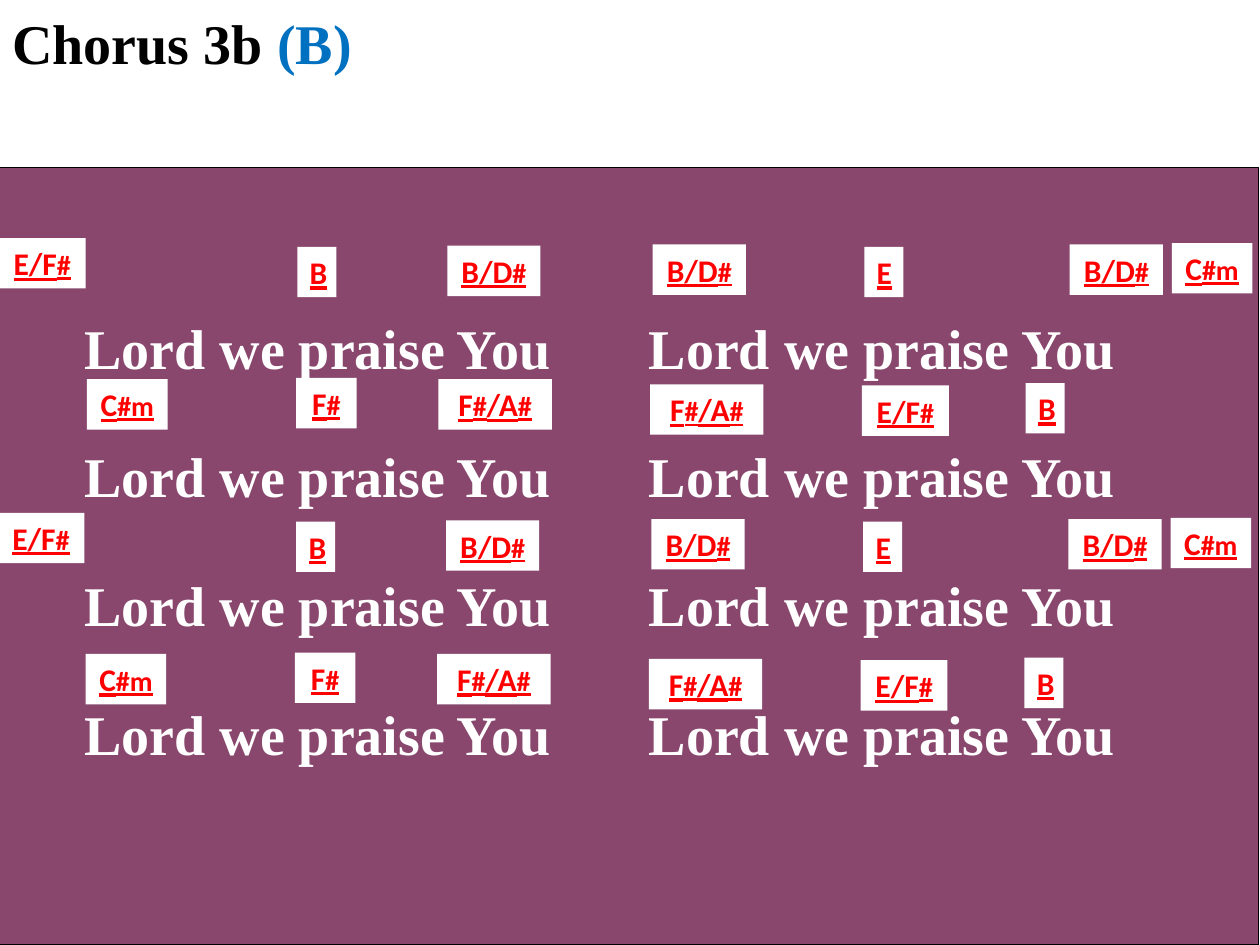
from dataclasses import dataclass
from itertools import groupby

from pptx import Presentation
from pptx import util as u
from pptx.dml.color import RGBColor
from pptx.enum import shapes, text
from pptx.oxml.xmlchemy import OxmlElement


@dataclass(frozen=True)
class Theme:
    paper: str = "FFFFFF"
    ink: str = "000000"
    panel: str = "89476D"
    key: str = "0070C0"
    chord: str = "FF0000"
    serif: str = "Times New Roman"
    sans: str = "Calibri"
    large: int = 32
    medium: int = 18
    small: int = 16


THEME = Theme()
WIDTH, HEIGHT = u.Inches(10), u.Inches(7.5)
CELL = WIDTH // 1000  # the page is a grid of 1000 columns by 750 rows

LINE = "Lord we praise You\tLord we praise You"
LINE_COUNT = 4
LYRIC_INDENT, SECOND_HALF = 66, 448

# Columns taken by each chord label; every label is CHORD_ROWS high
CHORD_COLUMNS = {"B": 31, "E": 31, "F#": 48, "C#m": 64, "E/F#": 69,
                 "B/D#": 74, "F#/A#": 90}
CHORD_ROWS = 40

# Chord, column and row over one pair of lines
CHORDS = [
    ("E/F#", -1, 189), ("B", 236, 196), ("B/D#", 355, 195),
    ("B/D#", 518, 194), ("E", 686, 196), ("B/D#", 849, 194),
    ("C#m", 930, 193),
    ("C#m", 69, 301), ("F#", 235, 300), ("F#/A#", 348, 301),
    ("F#/A#", 516, 305), ("E/F#", 684, 306), ("B", 814, 304),
]
# Column and row shift of each pair of lines
PAIR_SHIFTS = [(0, 0), (-1, 218)]


def color(value):
    return RGBColor.from_string(value)


def place(column, row, columns, rows):
    return [CELL * cells for cells in (column, row, columns, rows)]


def add_rect(page, *cells, fill, line=None):
    box = page.shapes.add_shape(shapes.MSO_SHAPE.RECTANGLE, *place(*cells))
    box.shadow.inherit = False
    box.fill.solid()
    box.fill.fore_color.rgb = color(fill)
    if line:
        box.line.color.rgb = color(line)
        box.line.width = u.Pt(0.75)
    else:
        box.line.fill.background()
    return box


def set_frame(box, wrap=True, left=10):
    frame = box.text_frame
    frame.word_wrap = wrap
    frame.auto_size = text.MSO_AUTO_SIZE.SHAPE_TO_FIT_TEXT
    frame.vertical_anchor = text.MSO_ANCHOR.TOP
    frame.margin_left = CELL * left
    return frame


def format_para(para, align=text.PP_ALIGN.LEFT, spacing=None, tab=None):
    para.alignment = align
    if spacing:
        para.line_spacing = spacing
    # Space before, as half of the line, needs XML
    properties = para._p.get_or_add_pPr()
    before = OxmlElement("a:spcBef")
    share = OxmlElement("a:spcPct")
    share.set("val", "50000")
    before.append(share)
    properties.append(before)
    if tab:
        stops = OxmlElement("a:tabLst")
        stop = OxmlElement("a:tab")
        stop.set("pos", str(CELL * tab))
        stop.set("algn", "l")
        stops.append(stop)
        properties.append(stops)


def add_span(para, words, *, size, font, ink, underline=None):
    span = para.add_run()
    span.text = words
    span.font.size = u.Pt(size)
    span.font.name = font
    span.font.bold = True
    span.font.underline = underline
    span.font.color.rgb = color(ink)


def add_lyrics(page):
    box = page.shapes.add_textbox(*place(1, 217, 999, 414))
    frame = set_frame(box, left=LYRIC_INDENT)
    for number in range(LINE_COUNT):
        para = frame.add_paragraph() if number else frame.paragraphs[0]
        format_para(para, spacing=1.5, tab=SECOND_HALF)
        add_span(para, LINE, size=THEME.large, font=THEME.serif,
                 ink=THEME.paper)


def add_title(page):
    box = add_rect(page, 0, 2, 333, 64, fill=THEME.paper)
    para = set_frame(box).paragraphs[0]
    format_para(para)
    for words, ink in (("Chorus 3b", THEME.ink), (" (B)", THEME.key)):
        add_span(para, words, size=THEME.large, font=THEME.serif, ink=ink)


def add_chord(page, chord, column, row):
    box = add_rect(page, column, row, CHORD_COLUMNS[chord], CHORD_ROWS,
                   fill=THEME.paper)
    para = set_frame(box, wrap=False).paragraphs[0]
    format_para(para, align=text.PP_ALIGN.CENTER)
    # Sharps and the minor sign are smaller than the note names
    for is_sign, letters in groupby(chord, key=lambda letter: letter in "#m"):
        add_span(para, "".join(letters), font=THEME.sans, ink=THEME.chord,
                 size=THEME.small if is_sign else THEME.medium,
                 underline=True)


def main():
    deck = Presentation()
    deck.slide_width, deck.slide_height = WIDTH, HEIGHT
    page = deck.slides.add_slide(deck.slide_layouts[6])

    # Panel, lyrics and heading
    add_rect(page, -3, 133, 1002, 617, fill=THEME.panel, line=THEME.ink)
    add_lyrics(page)
    add_title(page)

    # Chords over both pairs of lines
    for right, down in PAIR_SHIFTS:
        for chord, column, row in CHORDS:
            add_chord(page, chord, column + right, row + down)

    deck.save("out.pptx")


if __name__ == "__main__":
    main()
